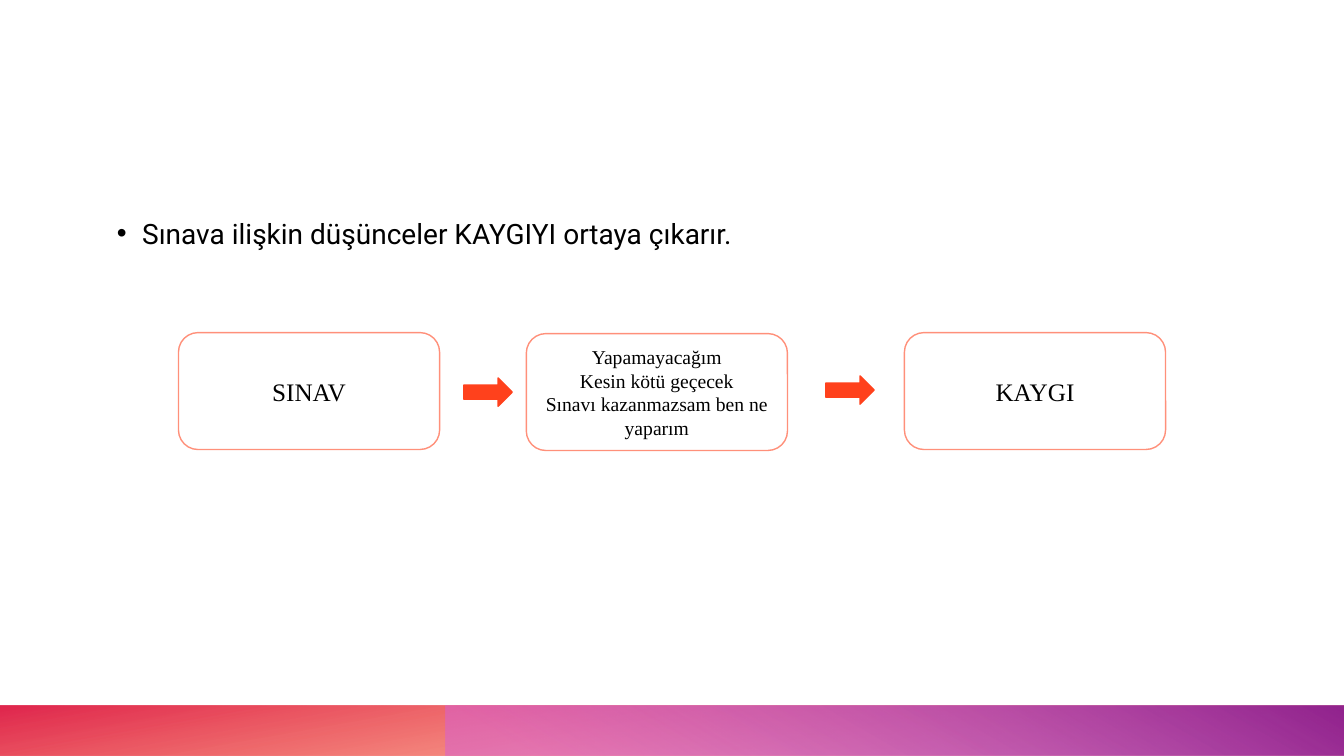
import dataclasses

import pptx
import pptx.dml.color
import pptx.enum.shapes
import pptx.enum.text
import pptx.oxml
import pptx.oxml.ns
import pptx.util

SHAPES = pptx.enum.shapes.MSO_SHAPE
WIDTH, HEIGHT = 13.33, 7.5
STEP_LEFTS = (1.77, 5.22, 8.97)
STEP_TOPS = (3.3, 3.31, 3.3)
STEP_SIZE = (2.59, 1.16)
ARROW_PLACES = ((4.6, 3.75), (8.19, 3.73))
ARROW_SIZE = (0.48, 0.28)
BAND_TOP = HEIGHT * 14 / 15
BAND_SPLIT = 4.42


@dataclasses.dataclass(frozen=True)
class Theme:
    """Hold the colours, fonts and type sizes of the slide."""
    paper: str = "FFFFFF"
    ink: str = "000000"
    outline: str = "FF907A"
    arrow: str = "FF411C"
    warm_band: tuple = ((14, "FE4A00", 28), (100, "DA002F", 85))
    cool_band: tuple = ((9, "D861D4", 55), (99, "92248E", 100))
    body_font: str = "Roboto"
    step_font: str = "Times New Roman"
    body_size: int = 20
    step_size: int = 18
    thought_size: int = 14


THEME = Theme()


def rgb(code):
    """Turn a hex code into a colour."""
    return pptx.dml.color.RGBColor.from_string(code)


def add_span(para, text, font, size):
    """Add one formatted run to a paragraph."""
    span = para.add_run()
    span.text = text
    span.font.name = font
    span.font.size = pptx.util.Pt(size)
    span.font.color.rgb = rgb(THEME.ink)


def add_box(page, kind, place, size):
    """Add a preset shape without shadow."""
    box = page.shapes.add_shape(kind, *map(pptx.util.Inches, (*place, *size)))
    box.shadow.inherit = False
    return box


def paint(box, fill, line):
    """Give a shape a plain fill and a thin line."""
    box.fill.solid()
    box.fill.fore_color.rgb = rgb(fill)
    box.line.color.rgb = rgb(line)
    box.line.width = pptx.util.Pt(1)


def add_band(page, left, stops, angle, rotation=0):
    """Add a mirrored footer band with a translucent gradient."""
    band = add_box(page, SHAPES.RECTANGLE, (left, BAND_TOP),
                   (WIDTH - left, HEIGHT - BAND_TOP))
    band.line.fill.background()
    band.rotation = rotation
    properties = band._element.spPr
    properties.xfrm.set("flipH", "1")
    marks = "".join(
        f'<a:gs pos="{position * 1000}"><a:srgbClr val="{color}">'
        f'<a:alpha val="{alpha * 1000}"/></a:srgbClr></a:gs>'
        for position, color, alpha in stops)
    gradient = pptx.oxml.parse_xml(
        f'<a:gradFill {pptx.oxml.ns.nsdecls("a")} rotWithShape="1">'
        f'<a:gsLst>{marks}</a:gsLst>'
        f'<a:lin ang="{angle * 60000}" scaled="0"/></a:gradFill>')
    properties.find(pptx.oxml.ns.qn("a:prstGeom")).addnext(gradient)


def add_statement(page, text):
    """Place the bulleted statement in the body placeholder."""
    body = page.placeholders[1]
    body.left, body.top, body.width, body.height = map(
        pptx.util.Inches, (1.16, 2.08, 11.2, 4.33))
    frame = body.text_frame
    frame.auto_size = pptx.enum.text.MSO_AUTO_SIZE.NONE
    frame.vertical_anchor = pptx.enum.text.MSO_ANCHOR.TOP
    frame.margin_left = frame.margin_right = 0
    frame.margin_top = frame.margin_bottom = 0
    para = frame.paragraphs[0]
    para.line_spacing = 1.2
    para.space_before = pptx.util.Pt(10)
    add_span(para, text, THEME.body_font, THEME.body_size)
    settings = para._p.get_or_add_pPr()
    indent = pptx.util.Inches(0.25)
    settings.set("marL", str(indent))
    settings.set("indent", str(-indent))
    settings.append(pptx.oxml.parse_xml(
        f'<a:buChar {pptx.oxml.ns.nsdecls("a")} char="•"/>'))


def add_step(page, place, lines, size):
    """Add a rounded step with centred lines."""
    box = add_box(page, SHAPES.ROUNDED_RECTANGLE, place, STEP_SIZE)
    paint(box, THEME.paper, THEME.outline)
    frame = box.text_frame
    frame.word_wrap = True
    frame.vertical_anchor = pptx.enum.text.MSO_ANCHOR.MIDDLE
    for index, line in enumerate(lines):
        para = frame.add_paragraph() if index else frame.paragraphs[0]
        para.alignment = pptx.enum.text.PP_ALIGN.CENTER
        add_span(para, line, THEME.step_font, size)


def main():
    """Build the slide and save the deck."""
    deck = pptx.Presentation()
    deck.slide_width = pptx.util.Inches(WIDTH)
    deck.slide_height = pptx.util.Inches(HEIGHT)
    page = deck.slides.add_slide(deck.slide_layouts.get_by_name("Title and Content"))
    title = page.shapes.title._element
    title.getparent().remove(title)

    add_band(page, 0, THEME.warm_band, 100, rotation=180)
    add_band(page, BAND_SPLIT, THEME.cool_band, 240)
    add_statement(page, "Sınava ilişkin düşünceler KAYGIYI ortaya çıkarır.")

    steps = (
        (("SINAV",), THEME.step_size),
        (("Yapamayacağım", "Kesin kötü geçecek",
          "Sınavı kazanmazsam ben ne yaparım"), THEME.thought_size),
        (("KAYGI",), THEME.step_size),
    )
    for place, (lines, size) in zip(zip(STEP_LEFTS, STEP_TOPS), steps):
        add_step(page, place, lines, size)
    for place in ARROW_PLACES:
        arrow = add_box(page, SHAPES.RIGHT_ARROW, place, ARROW_SIZE)
        paint(arrow, THEME.arrow, THEME.arrow)

    deck.save("out.pptx")


if __name__ == "__main__":
    main()
